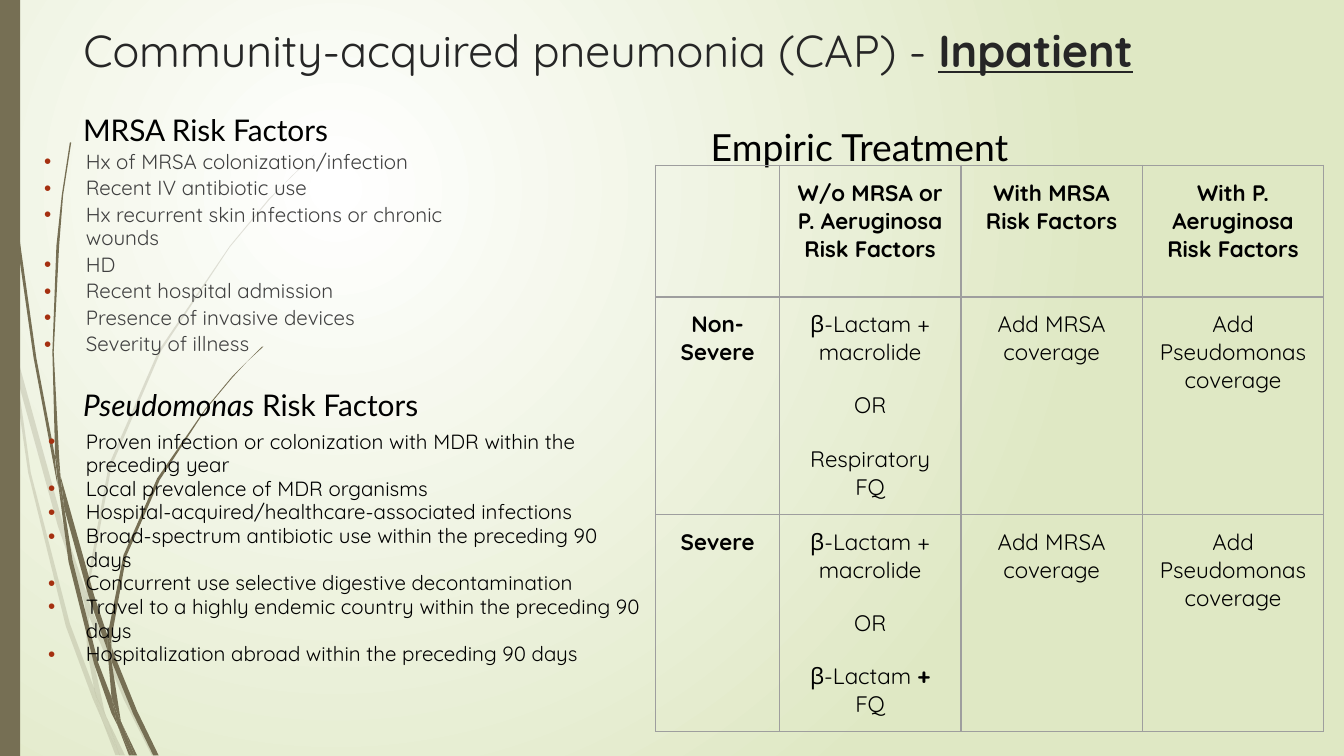
from lxml import etree
from pptx import Presentation
from pptx import util as u
from pptx.dml.color import RGBColor
from pptx.enum import shapes, text
from pptx.oxml.ns import qn

PX = 9144  # 100 px to the inch
WHITE = RGBColor(0xFF, 0xFF, 0xFF)
PALE_GREEN = RGBColor(0xDF, 0xE8, 0xC4)
OLIVE = RGBColor(0x76, 0x6F, 0x54)
RUST = RGBColor(0xA5, 0x30, 0x10)
BLACK = RGBColor(0, 0, 0)
CHARCOAL = RGBColor(0x26, 0x26, 0x26)
GREY = RGBColor(0x40, 0x40, 0x40)
BORDER = RGBColor(0x9E, 0x9E, 0x9E)
LEFT, CENTER = text.PP_ALIGN.LEFT, text.PP_ALIGN.CENTER
TOP, BOTTOM = text.MSO_ANCHOR.TOP, text.MSO_ANCHOR.BOTTOM


def write(frame, paragraphs, size, font="Quicksand", color=BLACK, align=LEFT,
          before=0, spacing=None, bullet=None):
    """Fill a frame; a paragraph is a list of (text, style letters from "biu").

    bullet is (left margin, hanging indent) in px.
    """
    for i, runs in enumerate(paragraphs):
        para = frame.paragraphs[0] if i == 0 else frame.add_paragraph()
        para.alignment = align
        para.space_before = u.Pt(before if i or bullet else 0)
        if spacing:
            para.line_spacing = spacing
        if bullet:
            props = para._p.get_or_add_pPr()
            props.set("marL", str(bullet[0] * PX))
            props.set("indent", str(-bullet[1] * PX))
            tint = etree.SubElement(props, qn("a:buClr"))
            etree.SubElement(tint, qn("a:srgbClr"), val=str(RUST))
            etree.SubElement(props, qn("a:buFont"), typeface="Arial")
            etree.SubElement(props, qn("a:buChar"), char="•")
        for words, style in runs:
            run = para.add_run()
            run.text = words
            run.font.name, run.font.size = font, u.Pt(size)
            run.font.color.rgb = color
            run.font.bold = "b" in style
            run.font.italic = "i" in style
            run.font.underline = "u" in style


def place(box, left, top, width, height, anchor=TOP, inset=10):
    """Position a text shape and return its frame, ready for text."""
    box.left, box.top, box.width, box.height = (
        n * PX for n in (left, top, width, height))
    frame = box.text_frame
    frame.word_wrap = True
    frame.auto_size = text.MSO_AUTO_SIZE.NONE
    frame.vertical_anchor = anchor
    frame.margin_left = frame.margin_right = 10 * PX
    frame.margin_top = frame.margin_bottom = inset * PX
    return frame


deck = Presentation()
deck.slide_width, deck.slide_height = 1000 * PX, u.Inches(5.625)
slide = deck.slides.add_slide(deck.slide_layouts[5])

# Background: radial glow
glow = slide.background.fill
glow.gradient()
for stop, color in zip(glow.gradient_stops, (WHITE, PALE_GREEN)):
    stop.color.rgb = color
for stop, position in zip(glow.gradient_stops, (0, 1)):
    stop.position = position
grad = next(slide._element.iter(qn("a:gradFill")))
grad.remove(grad.find(qn("a:lin")))
circle = etree.SubElement(grad, qn("a:path"), path="circle")
etree.SubElement(circle, qn("a:fillToRect"),
                 l="50000", t="50000", r="100000", b="100000")

# Grass blades along the left edge
faint_blades = [
    [(8, 263), (6, 241), (0, 211), (0, 224), (8, 258)],
    [(43, 391), (63, 449), (64, 440), (47, 390), (11, 259), (13, 282)],
    [(69, 455), (66, 447), (66, 458), (92, 520), (113, 562), (116, 562), (95, 519)],
    [(89, 562), (93, 562), (79, 533)],
    [(70, 512), (52, 464), (23, 352), (13, 282), (8, 263), (21, 352),
     (49, 466), (69, 520), (76, 536), (74, 530)],
    [(63, 449), (65, 485), (70, 512), (72, 519), (79, 533), (78, 530),
     (68, 484), (66, 458), (66, 456)],
    [(66, 438), (83, 347), (120, 261), (171, 184), (201, 148), (217, 131),
     (234, 115), (200, 148), (171, 183), (118, 261), (81, 346), (64, 438),
     (64, 440), (66, 447)],
    [(76, 536), (86, 562), (89, 562)],
    [(66, 456), (66, 458), (66, 447), (64, 440), (63, 449)],
    [(72, 519), (70, 512), (74, 530), (76, 536), (89, 562), (79, 533)],
]
dark_blades = [
    [(5, 82), (12, 175), (25, 266), (42, 357), (43, 361), (41, 343), (41, 340),
     (27, 266), (14, 174), (6, 82), (3, 36), (3, 0), (2, 0), (3, 36)],
    [(66, 444), (80, 484), (80, 475), (80, 473), (70, 443), (45, 354), (48, 379)],
    [(85, 487), (83, 481), (83, 492), (99, 531), (114, 562), (118, 562), (102, 529)],
    [(83, 519), (73, 493), (54, 417), (48, 379), (43, 358), (51, 418),
     (70, 494), (83, 531), (88, 541), (87, 538)],
    [(45, 354), (44, 340), (40, 262), (44, 183), (47, 145), (53, 106), (52, 106),
     (46, 145), (42, 183), (39, 262), (41, 337)],
    [(100, 562), (102, 562), (91, 539)],
    [(43, 358), (48, 379), (45, 354), (41, 337), (41, 340)],
    [(83, 475), (94, 414), (119, 357), (153, 305), (173, 281), (184, 269),
     (196, 258), (195, 258), (184, 269), (173, 280), (153, 304), (117, 356),
     (92, 413), (80, 473), (83, 481)],
    [(88, 541), (96, 562), (98, 562)],
    [(80, 484), (83, 519), (87, 530), (91, 539), (90, 537), (83, 492), (81, 488)],
    [(80, 484), (81, 488), (83, 492), (83, 481), (80, 473), (80, 475)],
    [(87, 530), (83, 519), (87, 538), (88, 541), (98, 562), (100, 562), (91, 539)],
]
for blades, opacity in ((faint_blades, 20), (dark_blades, 100)):
    for outline in blades:
        pen = slide.shapes.build_freeform(*outline[0], scale=PX)
        pen.add_line_segments(outline[1:], close=True)
        blade = pen.convert_to_shape()
        blade.shadow.inherit = False
        blade.line.fill.background()
        blade.fill.solid()
        blade.fill.fore_color.rgb = OLIVE
        if opacity < 100:
            tint = blade._element.spPr.find(qn("a:solidFill"))[0]
            etree.SubElement(tint, qn("a:alpha"), val=str(opacity * 1000))

rail = slide.shapes.add_shape(shapes.MSO_SHAPE.RECTANGLE, 0, 0, 15 * PX, deck.slide_height)
rail.shadow.inherit = False
rail.line.fill.background()
rail.fill.solid()
rail.fill.fore_color.rgb = OLIVE

# Title
write(place(slide.shapes.title, 52, 7, 898, 60),
      [[("Community-acquired pneumonia (CAP) - ", ""), ("Inpatient", "bu")]],
      size=24, color=CHARCOAL)

# Risk factor lists
pseudomonas_risks = [
    "Proven infection or colonization with MDR within the preceding year",
    "Local prevalence of MDR organisms",
    "Hospital-acquired/healthcare-associated infections",
    "Broad-spectrum antibiotic use within the preceding 90 days",
    "Concurrent use selective digestive decontamination",
    "Travel to a highly endemic country within the preceding 90 days",
    "Hospitalization abroad within the preceding 90 days",
]
mrsa_risks = [
    "Hx of MRSA colonization/infection",
    "Recent IV antibiotic use",
    "Hx recurrent skin infections or chronic wounds",
    "HD",
    "Recent hospital admission",
    "Presence of invasive devices",
    "Severity of illness",
]
for risks, area, color, before, bullet in (
        (pseudomonas_risks, (26, 310, 462, 238), BLACK, 0, (28, 28)),
        (mrsa_risks, (-15, 102, 409, 186), GREY, 1.5, (69, 31))):
    write(place(slide.shapes.add_textbox(0, 0, 0, 0), *area),
          [[(risk, "")] for risk in risks],
          size=11, color=color, before=before, spacing=0.96, bullet=bullet)

# Section headings
for runs, area, size, anchor, inset in (
        ([("MRSA Risk Factors", "")], (52, 81, 209, 39), 16, BOTTOM, 10),
        ([("Empiric Treatment", "")], (519, 94, 364, 42), 20, BOTTOM, 10),
        ([("Pseudomonas", "i"), (" Risk Factors", "")], (52, 283, 325, 37), 16, TOP, 5)):
    write(place(slide.shapes.add_textbox(0, 0, 0, 0), *area, anchor, inset),
          [runs], size=size, font="Lato")

# Treatment table
first_choice = [[("β-Lactam + macrolide", "")], [("OR", "")]]
add_ons = [[[("Add MRSA coverage", "")]], [[("Add Pseudomonas coverage", "")]]]
treatments = [
    [[]] + [[[(f"{group} Risk Factors", "b")]] for group in
            ("W/o MRSA or P. Aeruginosa", "With MRSA", "With P. Aeruginosa")],
    [[[("Non-", "b")], [("Severe", "b")]],
     first_choice + [[("Respiratory FQ", "")]], *add_ons],
    [[[("Severe", "b")]],
     first_choice + [[("β-Lactam ", ""), ("+", "b"), (" FQ", "")]], *add_ons],
]
table = slide.shapes.add_table(3, 4, 488 * PX, 123 * PX, 497 * PX, 406 * PX).table
table.first_row = table.horz_banding = False
for column, width in zip(table.columns, (92, 135, 135, 135)):
    column.width = width * PX
for row, height, contents in zip(table.rows, (98, 154, 154), treatments):
    row.height = height * PX
    for col, (cell, content) in enumerate(zip(row.cells, contents)):
        cell.margin_left = cell.margin_right = 10 * PX
        cell.margin_top = cell.margin_bottom = 10 * PX
        for side in ("lnL", "lnR", "lnT", "lnB"):
            edge = etree.SubElement(cell._tc.get_or_add_tcPr(), qn(f"a:{side}"),
                                    w=str(u.Pt(0.75)))
            ink = etree.SubElement(edge, qn("a:solidFill"))
            etree.SubElement(ink, qn("a:srgbClr"), val=str(BORDER))
        cell.fill.background()
        write(cell.text_frame, content, size=12, align=CENTER,
              before=13.5 if col else 0)

deck.save("out.pptx")
